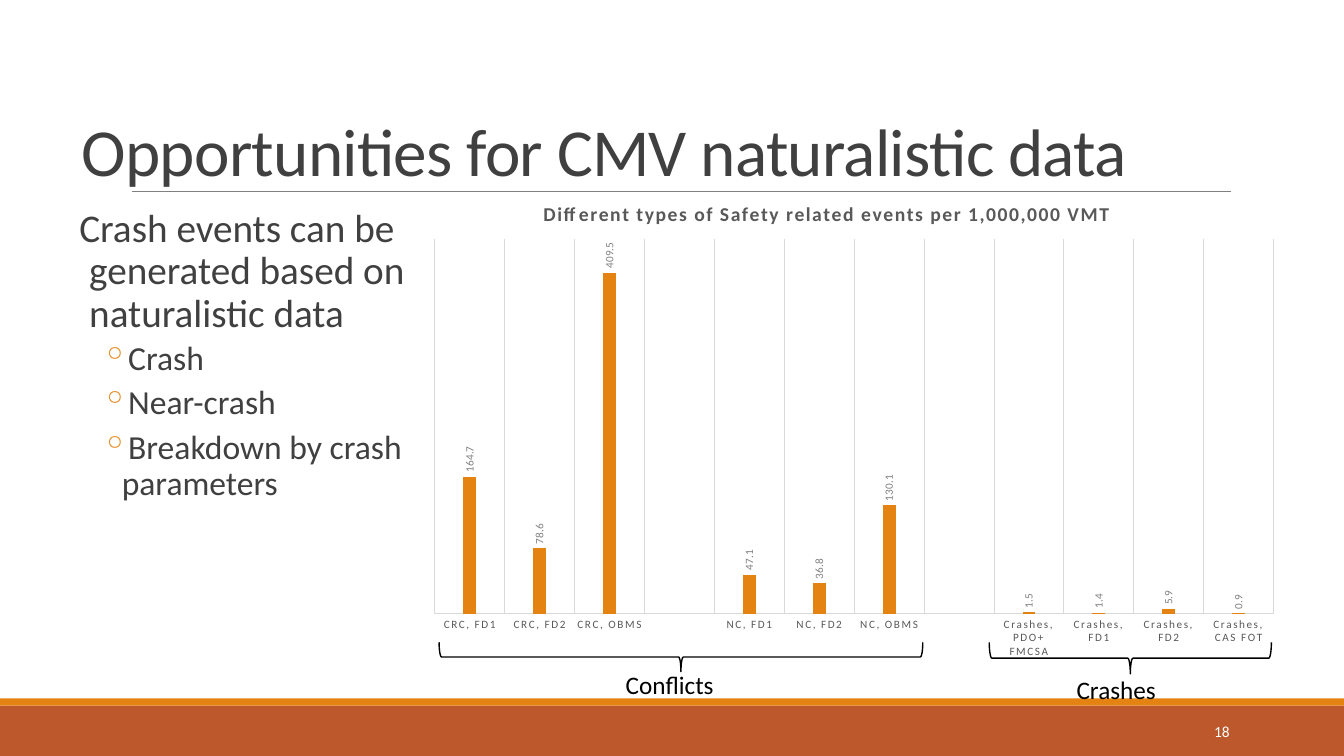
from lxml import etree
from pptx import Presentation
from pptx.chart.data import CategoryChartData
from pptx.dml.color import RGBColor
from pptx.enum.chart import XL_CHART_TYPE, XL_LABEL_POSITION, XL_TICK_MARK
from pptx.enum.shapes import MSO_CONNECTOR, MSO_SHAPE
from pptx.enum.text import MSO_ANCHOR, PP_ALIGN
from pptx.oxml import parse_xml
from pptx.oxml.ns import nsdecls, qn
from pptx.util import Cm, Pt

COLUMN = XL_CHART_TYPE.COLUMN_CLUSTERED
OUTSIDE = XL_LABEL_POSITION.OUTSIDE_END
NO_TICK = XL_TICK_MARK.NONE
STRAIGHT = MSO_CONNECTOR.STRAIGHT
RECT, BRACE = MSO_SHAPE.RECTANGLE, MSO_SHAPE.RIGHT_BRACE
TOP, MIDDLE = MSO_ANCHOR.TOP, MSO_ANCHOR.MIDDLE
LEFT, CENTER, RIGHT = PP_ALIGN.LEFT, PP_ALIGN.CENTER, PP_ALIGN.RIGHT

FONT = "Calibri"
ORANGE, RUST, DARK, GRAY = "E48312", "BD582C", "404040", "808080"
BLACK, WHITE = "000000", "FFFFFF"

EVENTS = [
    ("CRC, FD1", 164.7), ("CRC, FD2", 78.6), ("CRC, OBMS", 409.5), ("", None),
    ("NC, FD1", 47.1), ("NC, FD2", 36.8), ("NC, OBMS", 130.1), ("", None),
    ("Crashes, PDO+ FMCSA", 1.5), ("Crashes, FD1", 1.4),
    ("Crashes, FD2", 5.9), ("Crashes, CAS FOT", 0.9),
]


def color(code):
    return RGBColor.from_string(code)


def box(*sides):
    return [Cm(side) for side in sides]


def style(font, size, code, bold=False, gap=0):
    """Format a font; gap is the letter spacing in points."""
    font.name, font.size, font.bold = FONT, Pt(size), bold
    font.color.rgb = color(code)
    if gap:
        font._rPr.set("spc", str(int(gap * 100)))


def add_band(slide, top, height, code):
    band = slide.shapes.add_shape(RECT, *box(0, top, 33.87, height))
    band.shadow.inherit = False
    band.fill.solid()
    band.fill.fore_color.rgb = color(code)
    band.line.fill.background()


def add_rule(slide, left, right, top):
    rule = slide.shapes.add_connector(STRAIGHT, *box(left, top, right, top))
    rule.line.color.rgb = color(GRAY)
    rule.line.width = Pt(0.5)
    etree.SubElement(rule._element.spPr, qn("a:effectLst"))


def add_brace(slide, *sides):
    brace = slide.shapes.add_shape(BRACE, *box(*sides))
    brace.rotation = 90
    brace.shadow.inherit = False
    brace.fill.background()
    brace.line.color.rgb = color(BLACK)
    brace.line.width = Pt(1)


def add_label(slide, text, sides, size=18, code=BLACK, align=LEFT, anchor=TOP):
    frame = slide.shapes.add_textbox(*box(*sides)).text_frame
    frame.word_wrap = True
    frame.vertical_anchor = anchor
    frame.text = text
    para = frame.paragraphs[0]
    para.alignment = align
    style(para.runs[0].font, size, code)


def set_title(slide, text):
    title = slide.shapes.title
    title.left, title.top, title.width, title.height = box(1.8, 2.95, 27.94, 4.04)
    frame = title.text_frame
    frame.text = text
    frame.word_wrap = True
    frame.vertical_anchor = TOP
    para = frame.paragraphs[0]
    para.alignment = LEFT
    para.line_spacing = 0.85
    style(para.runs[0].font, 48, DARK, gap=-0.5)


def add_point(para, text, size, before, after, indent, hang, bullet=None):
    para.text = text
    para.line_spacing = 0.9
    para.space_before, para.space_after = Pt(before), Pt(after)
    style(para.runs[0].font, size, DARK)
    props = para._p.get_or_add_pPr()
    props.set("marL", str(Cm(indent)))
    props.set("indent", str(Cm(-hang)))
    if bullet:
        tint = etree.SubElement(props, qn("a:buClr"))
        etree.SubElement(tint, qn("a:srgbClr")).set("val", ORANGE)
        etree.SubElement(props, qn("a:buChar")).set("char", bullet)


def add_body(slide, lead, points):
    frame = slide.shapes.add_textbox(*box(2, 5.13, 9.07, 12.55)).text_frame
    frame.word_wrap = True
    frame.margin_left = frame.margin_right = 0
    add_point(frame.paragraphs[0], lead, 28, 12, 2, 0.25, 0.25)
    for point in points:
        para = frame.add_paragraph()
        para.level = 1
        add_point(para, point, 24, 2, 4, 1.07, 0.51, "◦")


def place(part, index, **sides):
    """Give a chart part a manual layout, in fractions of the chart."""
    for old in part.findall(qn("c:layout")):
        part.remove(old)
    inner = '<c:layoutTarget val="inner"/>' if "w" in sides else ""
    modes = "".join(f'<c:{side}Mode val="edge"/>' for side in "xy")
    values = "".join(f'<c:{k} val="{v}"/>' for k, v in sides.items())
    part.insert(index, parse_xml(
        f'<c:layout {nsdecls("c")}><c:manualLayout>{inner}{modes}{values}'
        "</c:manualLayout></c:layout>"))


def add_bars(slide, heading):
    data = CategoryChartData(number_format="0.0")
    names, values = zip(*EVENTS)
    data.categories = names
    data.add_series("Series 1", values)
    chart = slide.shapes.add_chart(
        COLUMN, *box(10.52, 4.47, 22.02, 12.4), data).chart
    style(chart.font, 10, BLACK)
    chart.has_legend = False

    chart.has_title = True
    frame = chart.chart_title.text_frame
    frame.text = heading
    style(frame.paragraphs[0].runs[0].font, 14, "595959", bold=True, gap=1)
    place(chart.chart_title._element, 1, x=0.14, y=0.04)
    place(chart._chartSpace.chart.plotArea, 0, x=0.02, y=0.125, w=0.96, h=0.762)

    axis = chart.category_axis
    axis.major_tick_mark = NO_TICK
    axis.has_major_gridlines = True
    for line in (axis.format.line, axis.major_gridlines.format.line):
        line.color.rgb = color("D9D9D9")
        line.width = Pt(0.75)
    style(axis.tick_labels.font, 8, "595959", gap=1)
    scale = chart.value_axis
    scale.visible = False
    scale.has_major_gridlines = False
    scale.minimum_scale, scale.maximum_scale = 0, 450

    plot = chart.plots[0]
    plot.gap_width, plot.overlap = 444, -90
    plot.vary_by_categories = False
    bars = plot.series[0]
    bars.format.fill.solid()
    bars.format.fill.fore_color.rgb = color(ORANGE)
    labels = bars.data_labels
    labels.show_value = True
    labels.position = OUTSIDE
    labels.number_format, labels.number_format_is_linked = "0.0", False
    style(labels.font, 8, GRAY)
    turn = labels._element.find(".//" + qn("a:bodyPr"))
    turn.set("rot", "-5400000")
    turn.set("vert", "horz")


def main():
    deck = Presentation()
    deck.slide_width, deck.slide_height = box(33.87, 19.05)
    slide = deck.slides.add_slide(deck.slide_layouts.get_by_name("Title Only"))
    add_band(slide, 17.78, 1.27, RUST)
    add_band(slide, 17.6, 0.18, ORANGE)
    add_rule(slide, 3.33, 31.01, 4.83)
    set_title(slide, "Opportunities for CMV naturalistic data")
    add_body(slide, "Crash events can be generated based on naturalistic data",
             ["Crash", "Near-crash", "Breakdown by crash parameters"])
    add_bars(slide, "Different types of Safety related events per 1,000,000 VMT")
    add_brace(slide, 16.79, 10.46, 0.74, 12.19)
    add_brace(slide, 28.09, 13.03, 0.79, 7.11)
    add_label(slide, "Conflicts", (15.52, 16.74, 3.3, 1.02))
    add_label(slide, "Crashes", (26.54, 16.87, 3.18, 1.02), align=CENTER)
    add_label(slide, "18", (23.34, 17.91, 7.9, 1.02), 11, WHITE, RIGHT, MIDDLE)
    deck.save("out.pptx")


if __name__ == "__main__":
    main()
